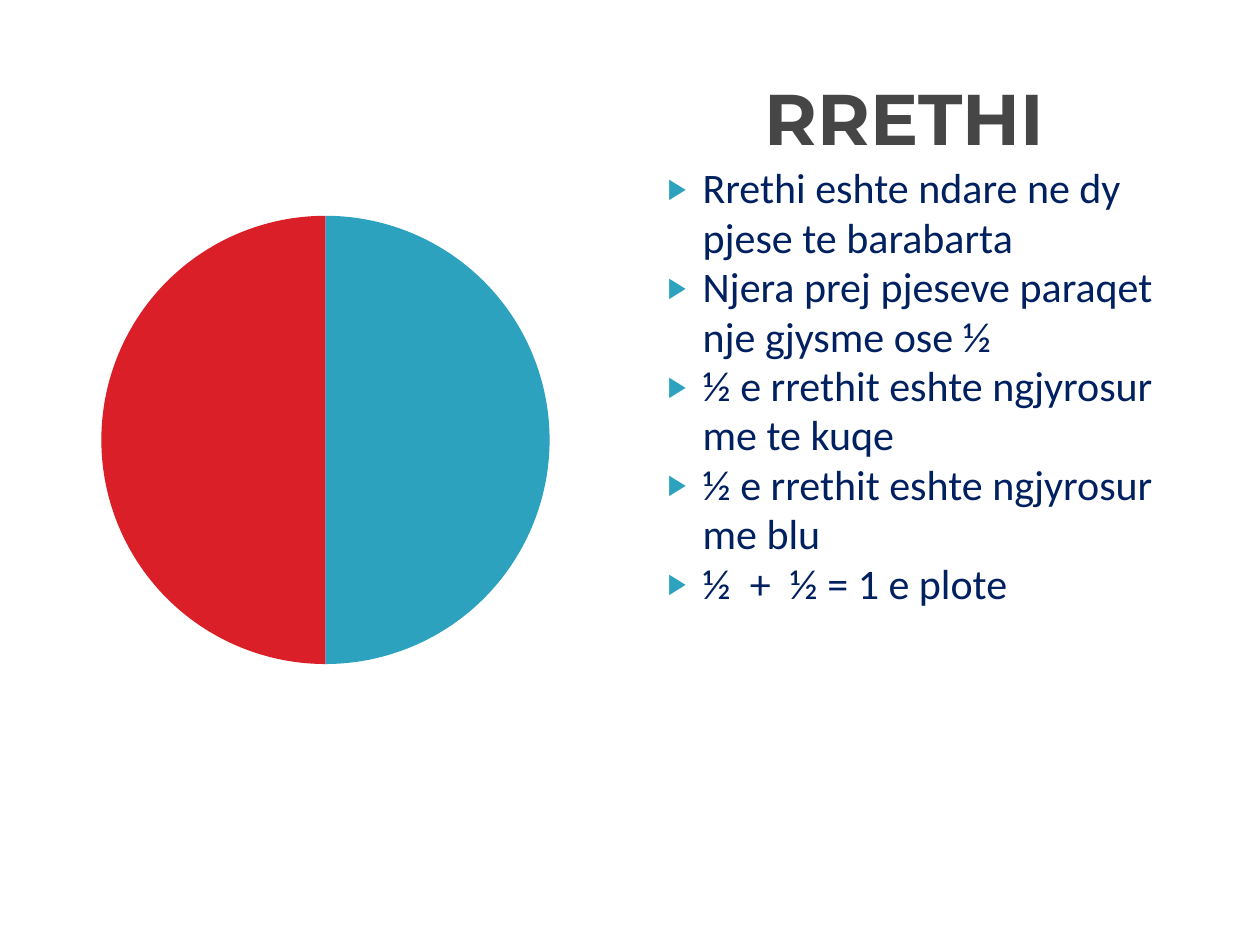
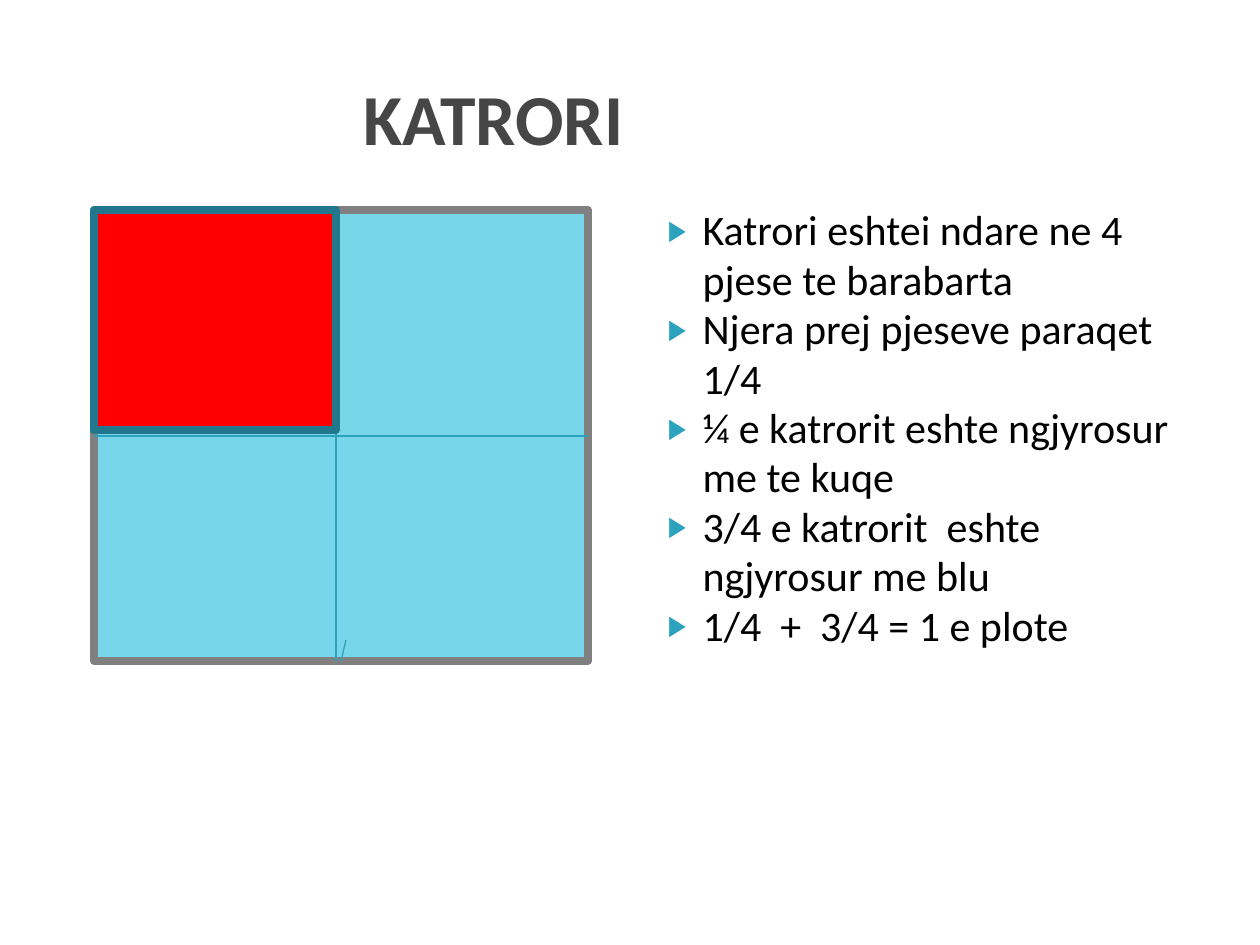
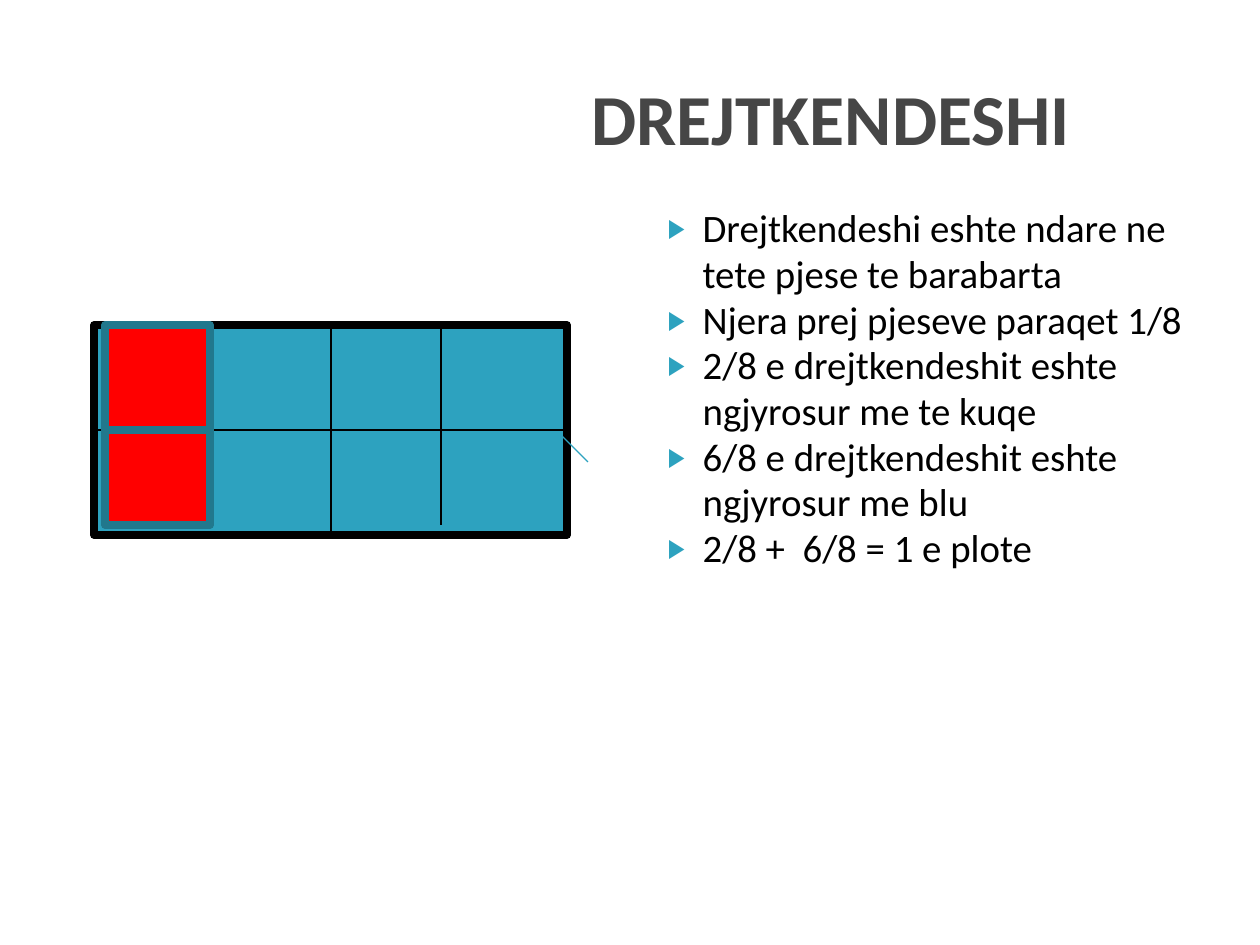
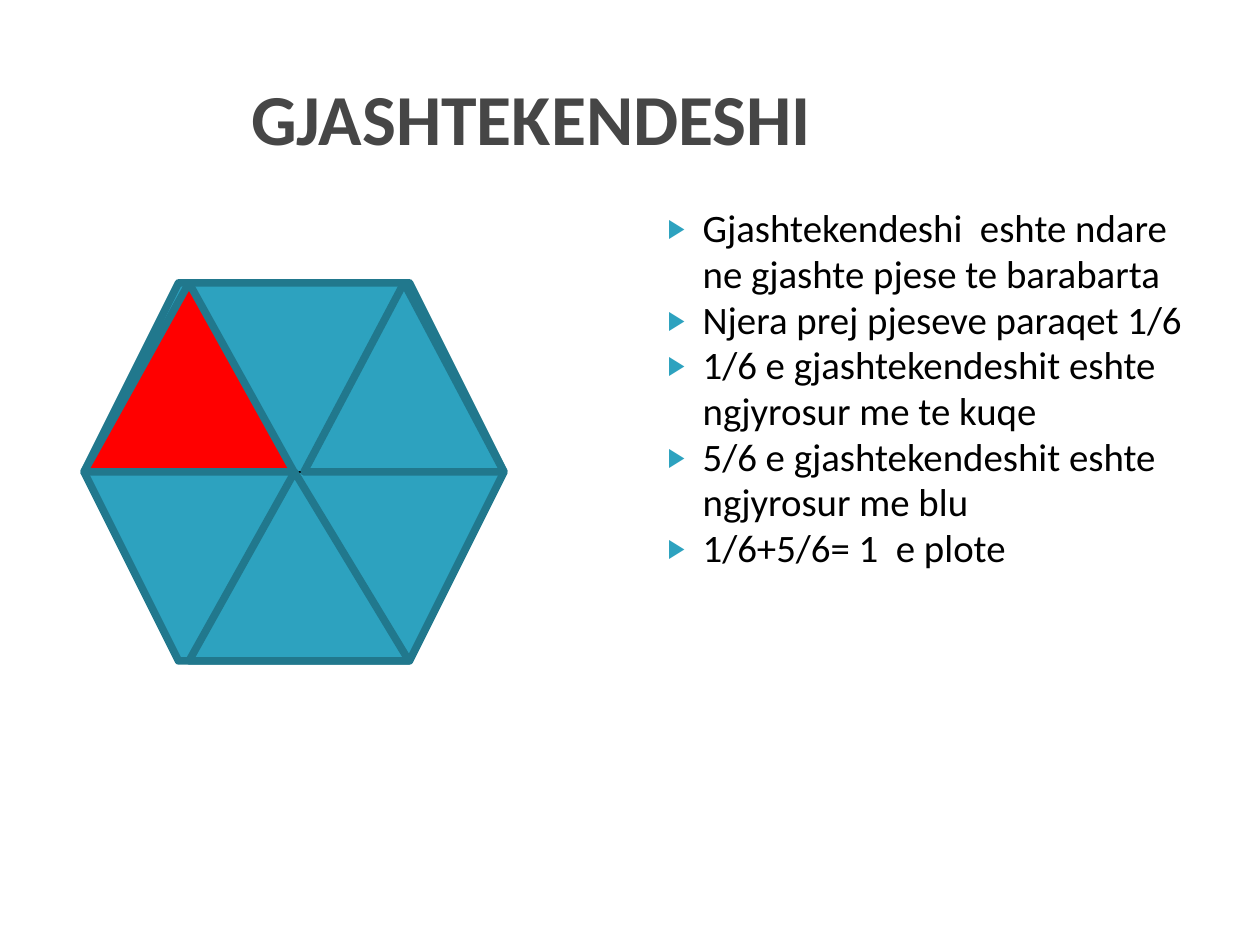
from lxml.etree import SubElement
from pptx import Presentation
from pptx.chart.data import CategoryChartData
from pptx.dml.color import RGBColor
from pptx.enum.chart import XL_CHART_TYPE as CHART
from pptx.enum.shapes import MSO_CONNECTOR as CONN, MSO_SHAPE as SHAPE
from pptx.enum.text import MSO_ANCHOR as ANCHOR, MSO_AUTO_SIZE as AUTO, PP_ALIGN as ALIGN
from pptx.oxml.ns import qn
from pptx.util import Emu, Pt

COLORS = {
    "title": "464646", "navy": "002060", "black": "000000", "teal": "2DA2BF",
    "edge": "21788D", "sky": "78D6EA", "gray": "808080", "red": "FF0000",
    "crimson": "DA1F28", "white": "FFFFFF",
}
FONT = "Calibri"
EMU_PER_PX = 914400 / 126


def px(n):
    return Emu(round(n * EMU_PER_PX))


def rgb(name):
    return RGBColor.from_string(COLORS[name])


def add_bullet(p):
    pPr = p._p.get_or_add_pPr()
    pPr.set("marL", str(px(50)))
    pPr.set("indent", str(-px(35)))
    clr = SubElement(pPr, qn("a:buClr"))
    SubElement(clr, qn("a:srgbClr"), val=COLORS["teal"])
    SubElement(pPr, qn("a:buSzPct"), val="68000")
    SubElement(pPr, qn("a:buChar"), char="▶")


def write(p, text, size=24, color="black", font=FONT, bold=False, bullet=False):
    p.alignment = ALIGN.LEFT
    p.space_before = Pt(0)
    if bullet:
        add_bullet(p)
        p.line_spacing = 0.98
    r = p.add_run()
    r.text = text
    f = r.font
    f.size, f.name, f.bold = Pt(size), font, bold
    f.color.rgb = rgb(color)


class Deck:
    def __init__(self):
        self.prs = Presentation()
        self.prs.slide_width, self.prs.slide_height = px(1260), px(945)
        self.s = None

    def place(self, sp, x, y, w, h):
        sp.left, sp.top, sp.width, sp.height = px(x), px(y), px(w), px(h)
        tf = sp.text_frame
        tf.word_wrap = True
        tf.auto_size = AUTO.NONE
        return tf

    def slide(self, title, indent, font=FONT):
        self.s = self.prs.slides.add_slide(self.prs.slide_layouts[1])
        fill = self.s.background.fill
        fill.solid()
        fill.fore_color.rgb = rgb("white")
        tf = self.place(self.s.shapes.title, 63, 38, 1134, 157)
        tf.vertical_anchor = ANCHOR.MIDDLE
        tf.margin_left = px(indent)
        write(tf.paragraphs[0], title, size=41, color="title", font=font, bold=True)

    def bullets(self, items, y=200, h=543, **fmt):
        tf = self.place(self.s.placeholders[1], 640, y, 557, h)
        tf.vertical_anchor = ANCHOR.TOP
        for i, item in enumerate(items):
            p = tf.add_paragraph() if i else tf.paragraphs[0]
            write(p, item, bullet=True, **fmt)

    def shape(self, kind, x, y, w, h, fill="teal", line="edge"):
        sp = self.s.shapes.add_shape(kind, px(x), px(y), px(w), px(h))
        sp.shadow.inherit = False
        sp.fill.solid()
        sp.fill.fore_color.rgb = rgb(fill)
        sp.line.color.rgb = rgb(line)
        sp.line.width = Pt(4.33)
        return sp

    def line(self, x1, y1, x2, y2, color="black"):
        c = self.s.shapes.add_connector(CONN.STRAIGHT, px(x1), px(y1), px(x2), px(y2))
        c.line.color.rgb = rgb(color)
        c.line.width = Pt(0.75)
        SubElement(c._element.spPr, qn("a:effectLst"))

    def pie(self, x, y, w, h, values, colors):
        data = CategoryChartData()
        data.categories = [str(i + 1) for i in range(len(values))]
        data.add_series("Series 1", values)
        chart = self.s.shapes.add_chart(CHART.PIE, px(x), px(y), px(w), px(h), data).chart
        chart.has_legend = chart.has_title = False
        chart.font.size, chart.font.name = Pt(18), "DejaVu Sans Mono"
        chart.font.color.rgb = rgb("black")
        plot = chart.plots[0]
        plot.vary_by_categories = True
        for i, color in enumerate(colors):
            fill = plot.series[0].points[i].format.fill
            fill.solid()
            fill.fore_color.rgb = rgb(color)


def circle(deck):
    deck.slide("RRETHI", 702, font="Montserrat")
    deck.pie(84, 116, 483, 648, (50, 50), ("teal", "crimson"))
    deck.bullets((
        "Rrethi eshte ndare ne dy pjese te barabarta",
        "Njera prej pjeseve paraqet nje gjysme ose ½",
        "½ e rrethit eshte ngjyrosur me te kuqe",
        "½ e rrethit eshte ngjyrosur me blu",
        "½  +  ½ = 1 e plote",
    ), y=158, h=693, color="navy")


def square(deck):
    deck.slide("KATRORI", 300)
    deck.bullets((
        "Katrori eshtei ndare ne 4 pjese te barabarta",
        "Njera prej pjeseve paraqet 1/4",
        "¼ e katrorit eshte ngjyrosur me te kuqe",
        "3/4 e katrorit  eshte ngjyrosur me blu",
        "1/4  +  3/4 = 1 e plote",
    ))
    deck.shape(SHAPE.RECTANGLE, 94, 210, 494, 451, "sky", "gray")
    for ends in ((346, 640, 341, 661), (336, 210, 336, 661), (94, 436, 588, 436)):
        deck.line(*ends, color="teal")
    deck.shape(SHAPE.RECTANGLE, 94, 210, 242, 220, "red")


def rectangle(deck):
    deck.slide("DREJTKENDESHI", 528)
    deck.bullets((
        "Drejtkendeshi eshte ndare ne tete pjese te barabarta",
        "Njera prej pjeseve paraqet 1/8",
        "2/8 e drejtkendeshit eshte ngjyrosur me te kuqe",
        "6/8 e drejtkendeshit eshte ngjyrosur me blu",
        "2/8 +  6/8 = 1 e plote",
    ), size=22.2)
    deck.shape(SHAPE.RECTANGLE, 94, 325, 473, 210, line="black")
    deck.line(331, 325, 331, 535)
    deck.line(210, 336, 210, 525)
    deck.line(462, 336, 588, 462, color="teal")
    deck.line(441, 325, 441, 525)
    deck.line(94, 430, 567, 430)
    for y, h in ((325, 105), (430, 95)):
        deck.shape(SHAPE.RECTANGLE, 105, y, 105, h, "red")


def hexagon(deck):
    deck.slide("GJASHTEKENDESHI", 188)
    deck.bullets((
        "Gjashtekendeshi  eshte ndare ne gjashte pjese te barabarta",
        "Njera prej pjeseve paraqet 1/6",
        "1/6 e gjashtekendeshit eshte ngjyrosur me te kuqe",
        "5/6 e gjashtekendeshit eshte ngjyrosur me blu",
        "1/6+5/6= 1  e plote",
    ), size=22.2)
    top, half = 283, 189
    middle = top + half
    deck.shape(SHAPE.HEXAGON, 84, top, 420, 2 * half)
    deck.shape(SHAPE.ISOSCELES_TRIANGLE, 84, top, 210, half, "red")
    deck.line(294, middle, 504, middle)
    bottom = deck.shape(SHAPE.ISOSCELES_TRIANGLE, 189, middle, 220, half)
    bottom.adjustments[0] = 0.48
    deck.shape(SHAPE.ISOSCELES_TRIANGLE, 304, top, 200, half)


def main():
    deck = Deck()
    for build in (circle, square, rectangle, hexagon):
        build(deck)
    deck.prs.save("out.pptx")


if __name__ == "__main__":
    main()
